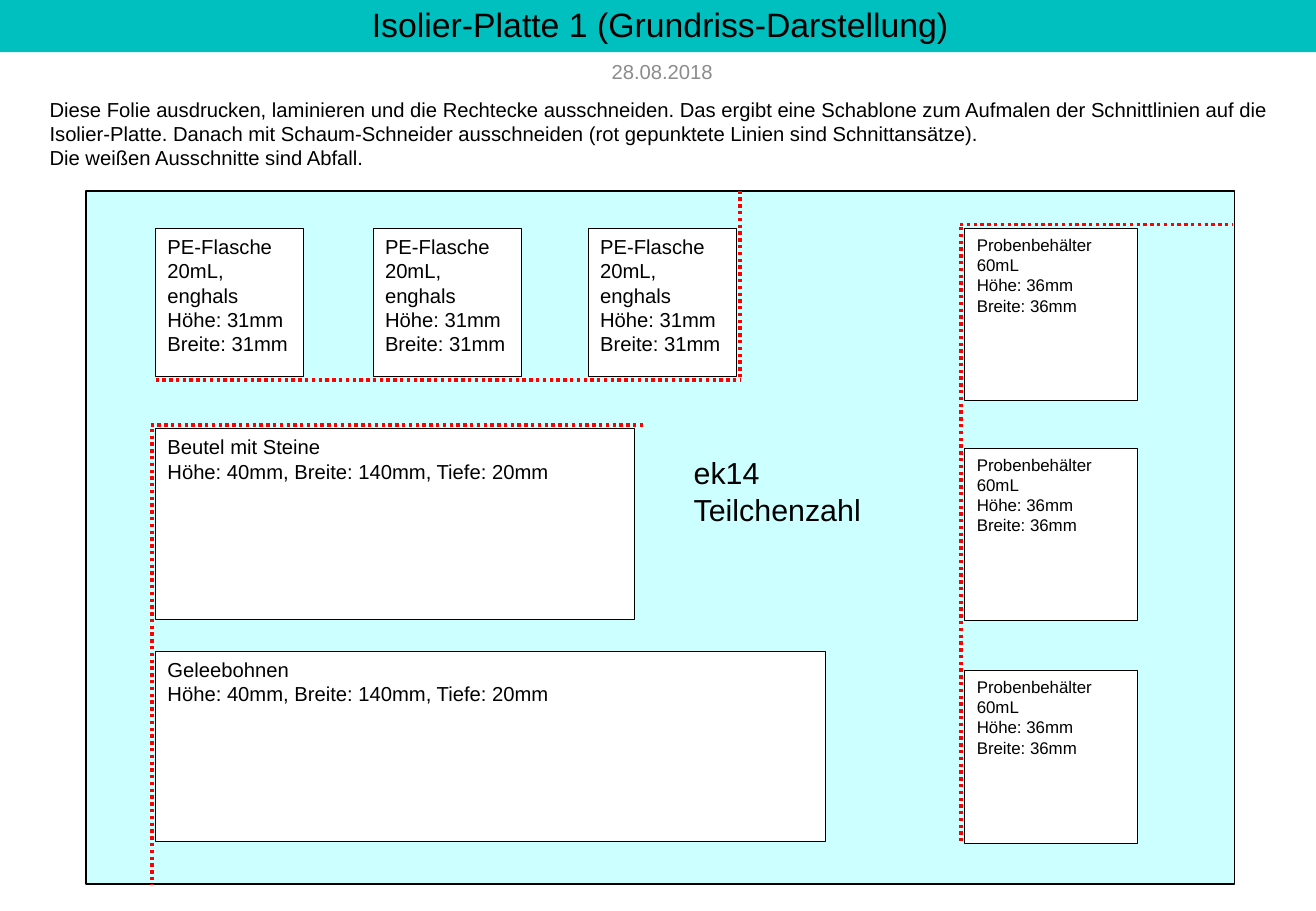
from lxml.etree import SubElement
from pptx import Presentation
from pptx.dml.color import RGBColor
from pptx.enum.dml import MSO_LINE
from pptx.enum.shapes import MSO_CONNECTOR, MSO_SHAPE
from pptx.enum.text import MSO_ANCHOR, PP_ALIGN
from pptx.oxml.ns import qn
from pptx.util import Inches, Pt

BLACK = RGBColor(0x00, 0x00, 0x00)
WHITE = RGBColor(0xFF, 0xFF, 0xFF)
GREY = RGBColor(0x8C, 0x8C, 0x8C)
TEAL = RGBColor(0x00, 0xBF, 0xBF)
PALE_CYAN = RGBColor(0xCC, 0xFF, 0xFF)
RED = RGBColor(0xFF, 0x00, 0x00)

TITLE = "Isolier-Platte 1 (Grundriss-Darstellung)"
DATE = "28.08.2018"
INSTRUCTIONS = [
    "Diese Folie ausdrucken, laminieren und die Rechtecke ausschneiden. "
    "Das ergibt eine Schablone zum Aufmalen der Schnittlinien auf die "
    "Isolier-Platte. Danach mit Schaum-Schneider ausschneiden "
    "(rot gepunktete Linien sind Schnittansätze).",
    "Die weißen Ausschnitte sind Abfall.",
]
PLATE_LABEL = ["ek14", "Teilchenzahl"]
BOTTLE = ["PE-Flasche 20mL, enghals", "Höhe: 31mm", "Breite: 31mm"]
SAMPLE = ["Probenbehälter 60mL", "Höhe: 36mm", "Breite: 36mm"]
BAG_SIZE = "Höhe: 40mm, Breite: 140mm, Tiefe: 20mm"
STONES = ["Beutel mit Steine", BAG_SIZE]
BEANS = ["Geleebohnen", BAG_SIZE]

PLATE = (0.71, 1.57, 9.45, 5.71)
LEFT, TOP = 1.28, 1.88
BOTTLE_SIDE, SAMPLE_SIDE = 1.22, 1.42
BOTTLE_LEFTS = (LEFT, 3.07, 4.84)
SAMPLE_LEFT = 7.94
SAMPLE_TOPS = (TOP, 3.69, 5.52)
BAG_HEIGHT = 1.57

CUTOUTS = [(BOTTLE, (left, TOP, BOTTLE_SIDE, BOTTLE_SIDE), 12) for left in BOTTLE_LEFTS]
CUTOUTS += [(SAMPLE, (SAMPLE_LEFT, top, SAMPLE_SIDE, SAMPLE_SIDE), 10) for top in SAMPLE_TOPS]
CUTOUTS += [
    (STONES, (LEFT, 3.53, 3.94, BAG_HEIGHT), 12),
    (BEANS, (LEFT, 5.36, 5.51, BAG_HEIGHT), 12),
]
CUTS = [
    (6.09, 1.57, 6.09, 3.12),
    (1.28, 3.13, 6.09, 3.13),
    (1.25, 3.53, 1.25, 7.29),
    (1.24, 3.5, 5.3, 3.5),
    (7.9, 1.85, 10.14, 1.85),
    (7.91, 1.87, 7.91, 6.92),
]


def write(shape, paragraphs, size=12, color=BLACK, align=PP_ALIGN.LEFT,
          anchor=MSO_ANCHOR.TOP, wrap=True, spacing=1.0):
    frame = shape.text_frame
    frame.word_wrap = wrap
    frame.vertical_anchor = anchor
    for index, text in enumerate(paragraphs):
        paragraph = frame.add_paragraph() if index else frame.paragraphs[0]
        paragraph.alignment = align
        paragraph.line_spacing = spacing
        run = paragraph.add_run()
        run.text = text
        run.font.name = "Arial"
        run.font.size = Pt(size)
        run.font.color.rgb = color


def add_box(slide, bounds, fill, line_width=None):
    box = slide.shapes.add_shape(MSO_SHAPE.RECTANGLE, *map(Inches, bounds))
    box.shadow.inherit = False
    box.fill.solid()
    box.fill.fore_color.rgb = fill
    if line_width:
        box.line.color.rgb = BLACK
        box.line.width = Pt(line_width)
    else:
        box.line.fill.background()
    return box


def add_text(slide, bounds, paragraphs, **text_format):
    write(slide.shapes.add_textbox(*map(Inches, bounds)), paragraphs, **text_format)


def add_cut(slide, ends):
    cut = slide.shapes.add_connector(MSO_CONNECTOR.STRAIGHT, *map(Inches, ends))
    cut.line.color.rgb = RED
    cut.line.width = Pt(2)
    cut.line.dash_style = MSO_LINE.ROUND_DOT
    SubElement(cut._element.spPr, qn("a:effectLst"))


def main():
    deck = Presentation()
    deck.slide_width, deck.slide_height = Inches(10.83), Inches(7.5)
    slide = deck.slides.add_slide(deck.slide_layouts[6])

    add_box(slide, PLATE, PALE_CYAN, 1)
    write(add_box(slide, (0, 0, 10.87, 0.43), TEAL), [TITLE], size=20,
          align=PP_ALIGN.CENTER, anchor=MSO_ANCHOR.MIDDLE, spacing=0.9)
    add_text(slide, (4.8, 0.43, 1.3, 0.31), [DATE], color=GREY,
             align=PP_ALIGN.CENTER, anchor=MSO_ANCHOR.MIDDLE)
    add_text(slide, (0.31, 0.75, 10.24, 0.79), INSTRUCTIONS)
    for paragraphs, bounds, size in CUTOUTS:
        write(add_box(slide, bounds, WHITE, 0.5), paragraphs, size=size)
    for ends in CUTS:
        add_cut(slide, ends)
    add_text(slide, (5.61, 3.69, 1.59, 0.71), PLATE_LABEL, size=18, wrap=False)

    deck.save("out.pptx")


if __name__ == "__main__":
    main()
